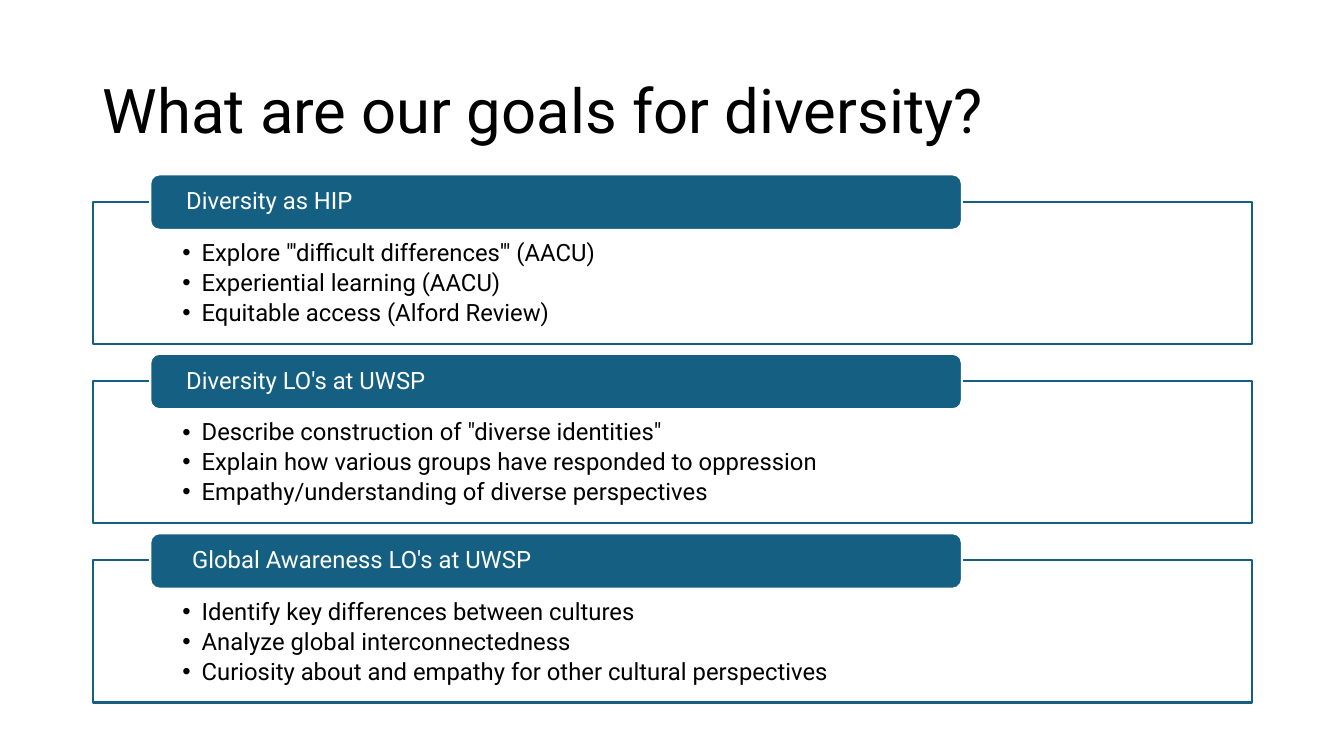
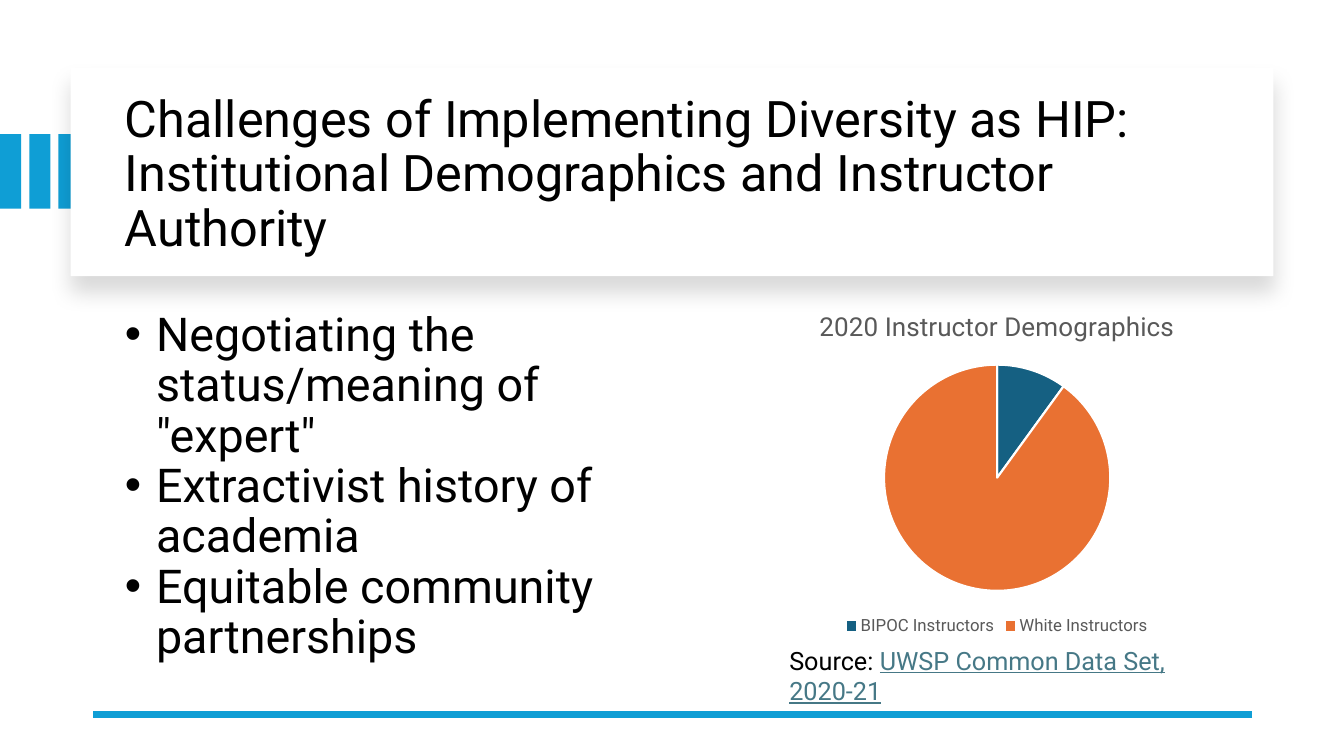
from lxml import etree
from pptx import Presentation
from pptx.chart.data import CategoryChartData
from pptx.dml.color import RGBColor
from pptx.enum.chart import XL_CHART_TYPE, XL_LEGEND_POSITION
from pptx.enum.shapes import MSO_CONNECTOR, MSO_SHAPE
from pptx.enum.text import MSO_ANCHOR, PP_ALIGN
from pptx.oxml import parse_xml
from pptx.oxml.ns import nsdecls, qn
from pptx.util import Emu, Pt

PX = 9144
FONT = "Roboto"
RECT, ROUND = MSO_SHAPE.RECTANGLE, MSO_SHAPE.ROUNDED_RECTANGLE
TOP, MID = MSO_ANCHOR.TOP, MSO_ANCHOR.MIDDLE
LEFT = PP_ALIGN.LEFT
PIE = XL_CHART_TYPE.PIE
BOTTOM = XL_LEGEND_POSITION.BOTTOM
STRAIGHT = MSO_CONNECTOR.STRAIGHT
INK = {
    "text": "000000",
    "white": "FFFFFF",
    "teal": "156082",
    "blue": "0F9ED5",
    "orange": "E97132",
    "gray": "595959",
    "link": "467886",
}
GOALS = [
    ("Diversity as HIP", [
        "Explore \"'difficult differences'\" (AACU)",
        "Experiential learning (AACU)",
        "Equitable access (Alford Review)",
    ]),
    ("Diversity LO's at UWSP", [
        'Describe construction of "diverse identities"',
        "Explain how various groups have responded to oppression",
        "Empathy/understanding of diverse perspectives",
    ]),
    (" Global Awareness LO's at UWSP", [
        "Identify key differences between cultures",
        "Analyze global interconnectedness",
        "Curiosity about and empathy for other cultural perspectives",
    ]),
]
ISSUES = [
    'Negotiating the status/meaning of "expert"',
    "Extractivist history of academia",
    "Equitable community partnerships",
]


def px(n):
    return Emu(n * PX)


def rgb(key):
    return RGBColor.from_string(INK[key])


def style(font, size, color):
    font.name = FONT
    font.size = Pt(size)
    font.bold = False
    font.color.rgb = rgb(color)


def bullet(para, dent):
    props = para._p.get_or_add_pPr()
    props.set("marL", str(px(dent)))
    props.set("indent", str(px(-dent)))
    face = etree.SubElement(props, qn("a:buFont"))
    face.set("typeface", "Arial")
    mark = etree.SubElement(props, qn("a:buChar"))
    mark.set("char", "•")


def write(shape, lines, size=18, color="text", anchor=MID, pads=(10, 5, 10, 5),
          dent=0, lead=0.9, after=0):
    frame = shape.text_frame
    frame.word_wrap = True
    frame.vertical_anchor = anchor
    (frame.margin_left, frame.margin_top,
     frame.margin_right, frame.margin_bottom) = map(px, pads)
    for i, line in enumerate(lines):
        para = frame.add_paragraph() if i else frame.paragraphs[0]
        para.alignment = LEFT
        para.line_spacing = lead
        para.space_after = Pt(after)
        if dent:
            bullet(para, dent)
        run = para.add_run()
        run.text = line
        style(run.font, size, color)
    return frame


def label(slide, box, lines, **form):
    return write(slide.shapes.add_textbox(*map(px, box)), lines, **form)


def block(slide, box, fill, line=None, kind=RECT):
    shape = slide.shapes.add_shape(kind, *map(px, box))
    shape.shadow.inherit = False
    shape.fill.solid()
    shape.fill.fore_color.rgb = rgb(fill)
    if line:
        shape.line.color.rgb = rgb(line)
        shape.line.width = Pt(1.5)
    else:
        shape.line.fill.background()
    return shape


def shade(shape):
    glow = shape._element.spPr.find(qn("a:effectLst"))
    glow.append(parse_xml(
        f'<a:outerShdw {nsdecls("a")} blurRad="{Pt(15)}" dist="{Pt(11)}" '
        f'dir="5400000" algn="t" rotWithShape="0"><a:srgbClr val="{INK["text"]}">'
        '<a:alpha val="15000"/></a:srgbClr></a:outerShdw>'))


def rule(slide, left, right, y):
    line = slide.shapes.add_connector(STRAIGHT, px(right), px(y), px(left), px(y))
    line.line.color.rgb = rgb("blue")
    line.line.width = Pt(4.5)
    etree.SubElement(line._element.spPr, qn("a:effectLst"))


def panel(slide, top, head, items):
    body = block(slide, (92, top, 1150, 141), "white", "teal")
    write(body, items, size=17, anchor=TOP, pads=(89, 39, 89, 13), dent=19, after=3)
    tab = block(slide, (149, top - 27, 805, 55), "teal", "white", ROUND)
    write(tab, [head], size=17, color="white", pads=(33, 0, 33, 0))


def pie(slide, box):
    data = CategoryChartData()
    data.categories = ["BIPOC Instructors", "White Instructors"]
    name = "2020 Instructor Demographics"
    data.add_series(name, [10, 90])
    chart = slide.shapes.add_chart(PIE, *map(px, box), data).chart
    style(chart.font, 10, "text")
    chart.has_title = True
    title = chart.chart_title
    title.include_in_layout = False
    title.text_frame.text = name
    style(title.text_frame.paragraphs[0].runs[0].font, 18.6, "gray")
    chart.has_legend = True
    chart.legend.position = BOTTOM
    chart.legend.include_in_layout = False
    style(chart.legend.font, 12, "gray")
    plot = chart.plots[0]
    plot.vary_by_categories = True
    for i, color in enumerate(("teal", "orange")):
        form = plot.series[0].points[i].format
        form.fill.solid()
        form.fill.fore_color.rgb = rgb(color)
        form.line.color.rgb = rgb("white")
        form.line.width = Pt(1.5)


def goals(slide):
    for i, (head, items) in enumerate(GOALS):
        panel(slide, 200 + 178 * i, head, items)
    label(slide, (92, 40, 1150, 145), ["What are our goals for diversity?"], size=44)


def issues(slide):
    for i in range(3):
        block(slide, (i * 29, 133, 21, 74), "blue")
    shade(block(slide, (70, 67, 1193, 207), "white"))
    rule(slide, 92, 1242, 709)
    label(slide, (114, 89, 1087, 170), [
        "Challenges of Implementing Diversity as HIP: "
        "Institutional Demographics and Instructor Authority"], size=36)
    label(slide, (114, 295, 573, 377), ISSUES, size=33.3, dent=31)
    pie(slide, (758, 290, 462, 345))
    note = label(slide, (773, 635, 429, 71), ["Source: "], anchor=TOP, lead=1)
    cite = note.paragraphs[0].add_run()
    cite.text = "UWSP Common Data Set, 2020-21"
    style(cite.font, 18, "link")
    cite.font.underline = True


def main():
    deck = Presentation()
    deck.slide_width, deck.slide_height = px(1333), px(750)
    for build in (goals, issues):
        build(deck.slides.add_slide(deck.slide_layouts[6]))
    deck.save("out.pptx")


if __name__ == "__main__":
    main()
